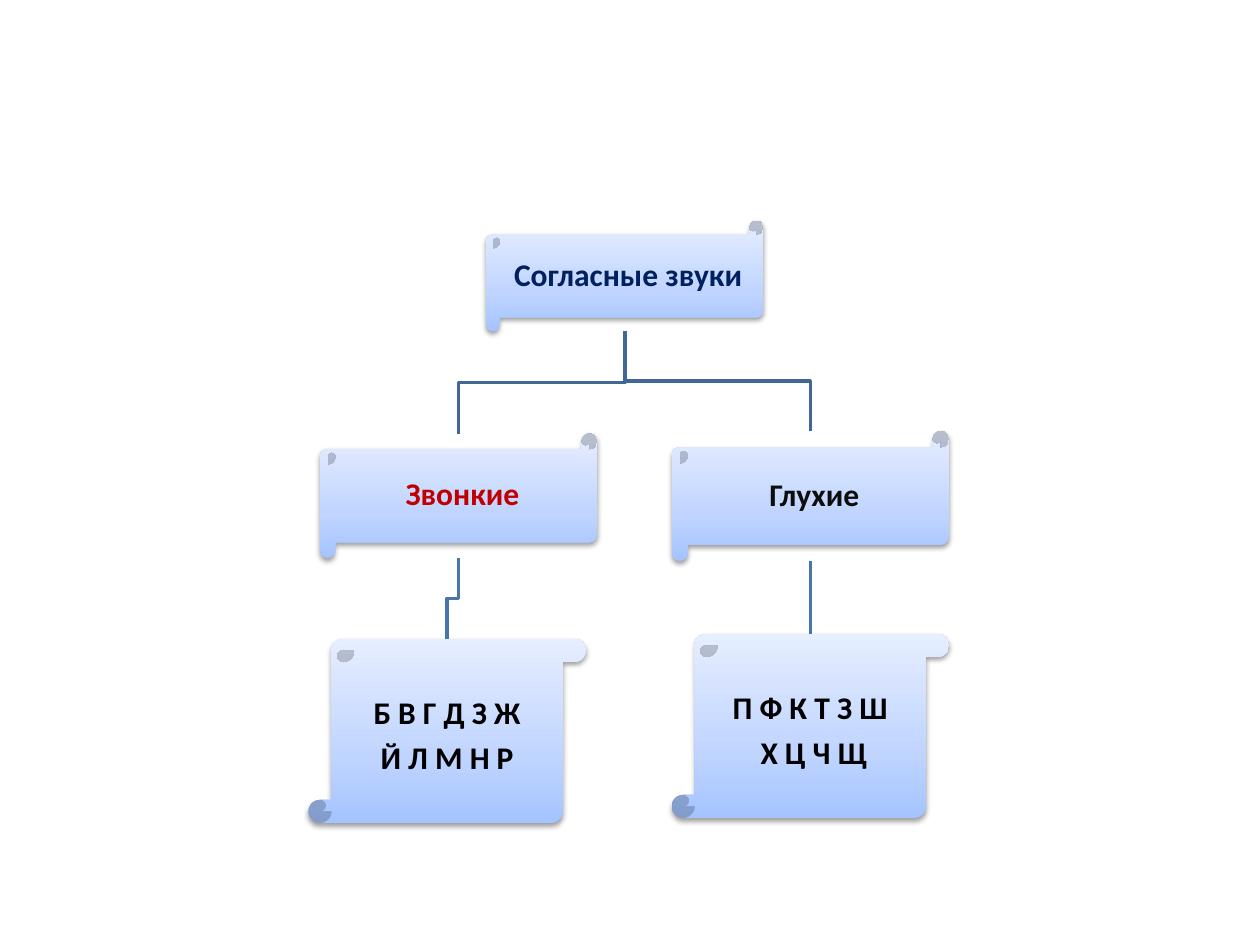
from lxml import etree
from pptx import Presentation
from pptx.dml.color import RGBColor
from pptx.enum.shapes import MSO_CONNECTOR, MSO_SHAPE
from pptx.enum.text import MSO_ANCHOR, PP_ALIGN
from pptx.util import Cm, Pt

HORIZONTAL = MSO_SHAPE.HORIZONTAL_SCROLL
VERTICAL = MSO_SHAPE.VERTICAL_SCROLL
STRAIGHT = MSO_CONNECTOR.STRAIGHT
MIDDLE = MSO_ANCHOR.MIDDLE
CENTER = PP_ALIGN.CENTER
NAMESPACE = "http://schemas.openxmlformats.org/drawingml/2006/main"

COLORS = {
    "scroll_bottom": "A4C4FF",
    "scroll_middle": "BFD4FF",
    "scroll_top": "E6EEFF",
    "shadow": "000000",
    "heading": "002060",
    "voiced": "C00000",
    "voiceless": "0D0D0D",
    "letters": "000000",
    "upper_line": "3F6797",
    "lower_line": "4875AC",
}
GRADIENT = ((0, "scroll_bottom"), (35000, "scroll_middle"), (100000, "scroll_top"))
SCROLL_WIDTH = 5.59
FRAME_FORMAT = {
    "word_wrap": True,
    "vertical_anchor": MIDDLE,
    "margin_left": Cm(0.18),
    "margin_right": Cm(0.18),
    "margin_top": Cm(0.18),
    "margin_bottom": Cm(0.18),
}
PARAGRAPH_FORMAT = {"alignment": CENTER, "line_spacing": 0.9, "space_after": Pt(6.3)}
FONT_FORMAT = {"name": "Calibri", "size": Pt(18), "bold": True}

SCROLLS = {
    "consonants": (HORIZONTAL, 9.8, 4.45, 2.23, "heading", ["Согласные звуки"]),
    "voiced": (HORIZONTAL, 6.45, 8.74, 2.51, "voiced", ["Звонкие"]),
    "voiced_letters": (VERTICAL, 6.22, 12.88, 3.71, "letters",
                       ["Б В Г Д З Ж", " Й Л М Н Р "]),
    "voiceless": (HORIZONTAL, 13.54, 8.69, 2.62, "voiceless", ["Глухие"]),
    "voiceless_letters": (VERTICAL, 13.54, 12.78, 3.71, "letters",
                          ["П Ф К Т З Ш", " Х Ц Ч Щ"]),
}
LINKS = (
    ("consonants", "voiced", "upper_line"),
    ("consonants", "voiceless", "upper_line"),
    ("voiced", "voiced_letters", "lower_line"),
    ("voiceless", "voiceless_letters", "lower_line"),
)


def apply_format(target, values):
    for name, value in values.items():
        setattr(target, name, value)


def add_element(parent, tag, **attributes):
    return etree.SubElement(parent, f"{{{NAMESPACE}}}{tag}", attributes)


def add_gradient(properties):
    gradient = add_element(properties, "gradFill", rotWithShape="1")
    stops = add_element(gradient, "gsLst")
    for position, color in GRADIENT:
        stop = add_element(stops, "gs", pos=str(position))
        add_element(stop, "srgbClr", val=COLORS[color])
    add_element(gradient, "lin", ang="16200000", scaled="1")


def add_shadow(properties):
    effects = add_element(properties, "effectLst")
    shadow = add_element(effects, "outerShdw", blurRad="40000", dist="20000",
                         dir="5400000", rotWithShape="0")
    color = add_element(shadow, "srgbClr", val=COLORS["shadow"])
    add_element(color, "alpha", val="38000")


def write_text(shape, lines, color):
    frame = shape.text_frame
    apply_format(frame, FRAME_FORMAT)
    frame.text = "\n".join(lines)
    for paragraph in frame.paragraphs:
        apply_format(paragraph, PARAGRAPH_FORMAT)
        font = paragraph.runs[0].font
        apply_format(font, FONT_FORMAT)
        font.color.rgb = RGBColor.from_string(COLORS[color])


def add_scroll(slide, kind, left, top, height, color, lines):
    shape = slide.shapes.add_shape(kind, Cm(left), Cm(top), Cm(SCROLL_WIDTH), Cm(height))
    add_gradient(shape._element.spPr)
    shape.line.fill.background()
    add_shadow(shape._element.spPr)
    write_text(shape, lines, color)
    return shape


def add_link(slide, upper, lower, color):
    start_x = upper.left + upper.width // 2
    start_y = upper.top + upper.height
    end_x = lower.left + lower.width // 2
    end_y = lower.top
    if start_x == end_x:
        link = slide.shapes.add_connector(STRAIGHT, start_x, start_y, end_x, end_y)
        add_element(link._element.spPr, "effectLst")
    else:
        middle_y = (start_y + end_y) // 2
        builder = slide.shapes.build_freeform(start_x, start_y)
        builder.add_line_segments(
            [(start_x, middle_y), (end_x, middle_y), (end_x, end_y)], close=False)
        link = builder.convert_to_shape()
        link.fill.background()
        link.shadow.inherit = False
    link.line.color.rgb = RGBColor.from_string(COLORS[color])
    link.line.width = Pt(2)


def main():
    presentation = Presentation()
    presentation.slide_width = Cm(25.4)
    presentation.slide_height = Cm(19.05)
    slide = presentation.slides.add_slide(presentation.slide_layouts[6])
    scrolls = {name: add_scroll(slide, *values) for name, values in SCROLLS.items()}
    for upper, lower, color in LINKS:
        add_link(slide, scrolls[upper], scrolls[lower], color)
    presentation.save("out.pptx")


if __name__ == "__main__":
    main()
